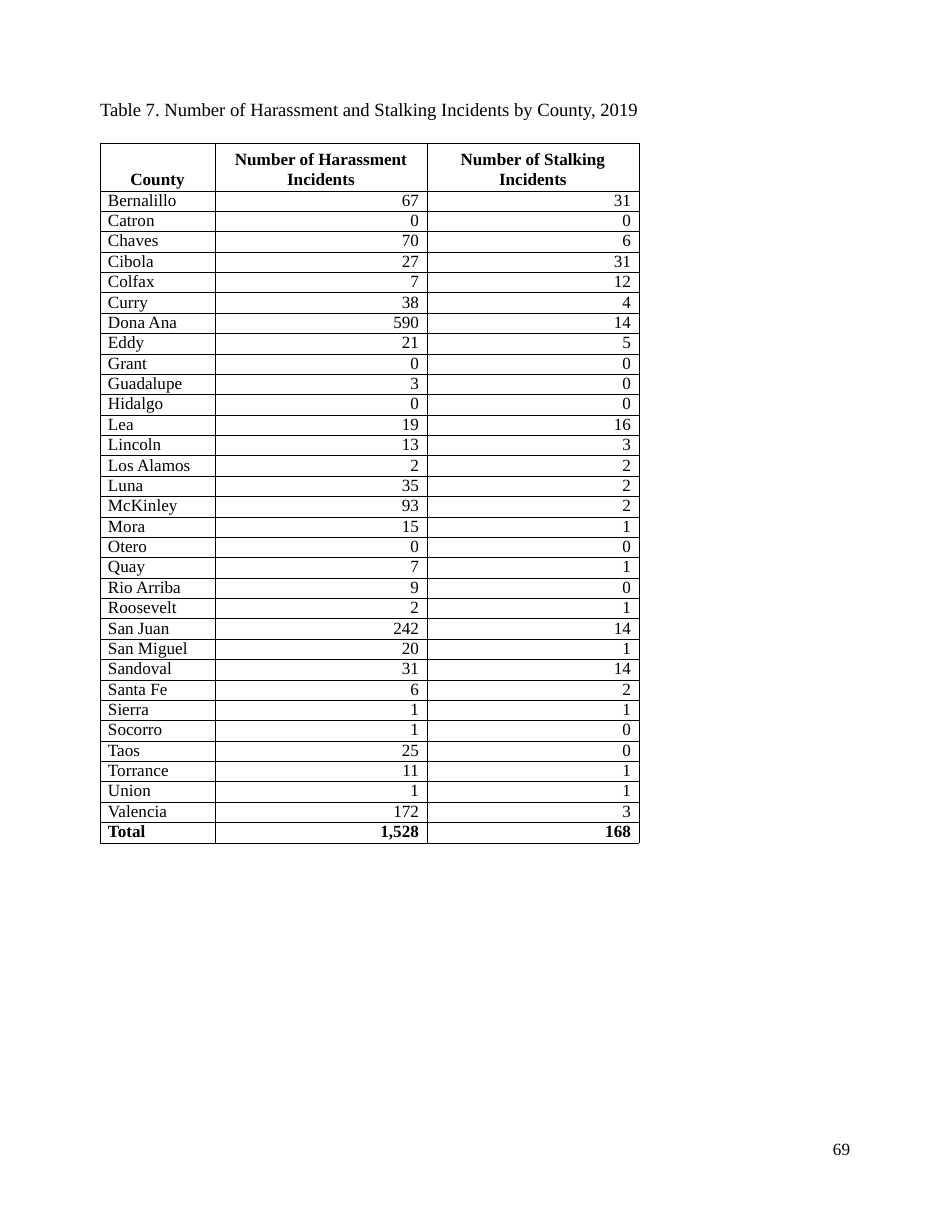
import pptx
import pptx.util
import pptx.oxml
import pptx.oxml.ns
import pptx.dml.color
import pptx.enum.text

ALIGN = pptx.enum.text.PP_ALIGN
ANCHOR = pptx.enum.text.MSO_ANCHOR
COLORS = {"ink": "000000"}
FONT = "Times New Roman"
SCALE = 914400 // 112

HEADS = ["County", "Number of Harassment Incidents", "Number of Stalking Incidents"]
COUNTS = [
    ("Bernalillo", 67, 31), ("Catron", 0, 0), ("Chaves", 70, 6),
    ("Cibola", 27, 31), ("Colfax", 7, 12), ("Curry", 38, 4),
    ("Dona Ana", 590, 14), ("Eddy", 21, 5), ("Grant", 0, 0),
    ("Guadalupe", 3, 0), ("Hidalgo", 0, 0), ("Lea", 19, 16),
    ("Lincoln", 13, 3), ("Los Alamos", 2, 2), ("Luna", 35, 2),
    ("McKinley", 93, 2), ("Mora", 15, 1), ("Otero", 0, 0),
    ("Quay", 7, 1), ("Rio Arriba", 9, 0), ("Roosevelt", 2, 1),
    ("San Juan", 242, 14), ("San Miguel", 20, 1), ("Sandoval", 31, 14),
    ("Santa Fe", 6, 2), ("Sierra", 1, 1), ("Socorro", 1, 0),
    ("Taos", 25, 0), ("Torrance", 11, 1), ("Union", 1, 1),
    ("Valencia", 172, 3), ("Total", 1528, 168),
]


def px(count):
    return pptx.util.Emu(count * SCALE)


def assign(item, values):
    for name, value in values.items():
        setattr(item, name, value)


def write(frame, text, size, para, bold=False):
    """Fill a text frame with one styled paragraph."""
    line = frame.paragraphs[0]
    assign(line, para)
    run = line.add_run()
    run.text = text
    assign(run.font, {"name": FONT, "size": pptx.util.Pt(size), "bold": bold})
    run.font.color.rgb = pptx.dml.color.RGBColor.from_string(COLORS["ink"])


def set_text(shape, box, text, size):
    """Place a shape and set its text, flush with its left edge."""
    assign(shape, dict(zip(("left", "top", "width", "height"), map(px, box))))
    assign(shape.text_frame, {
        "margin_left": 0, "margin_right": 0, "margin_top": px(1),
        "margin_bottom": 0, "word_wrap": True, "vertical_anchor": ANCHOR.TOP,
        "auto_size": pptx.enum.text.MSO_AUTO_SIZE.NONE})
    para = {"alignment": ALIGN.LEFT, "space_before": pptx.util.Pt(1), "line_spacing": 1.0}
    write(shape.text_frame, text, size, para)


def add_rules(cell):
    """Draw a thin line on all four sides of a cell."""
    props = cell._tc.get_or_add_tcPr()
    for spot, side in enumerate("LRTB"):
        props.insert(spot, pptx.oxml.parse_xml(
            f'<a:ln{side} {pptx.oxml.ns.nsdecls("a")} w="6350"><a:solidFill>'
            f'<a:srgbClr val="{COLORS["ink"]}"/></a:solidFill></a:ln{side}>'))


def fill_cell(cell, text, align, bold, head):
    cell.fill.background()
    assign(cell, {
        "margin_left": px(8), "margin_right": px(8), "margin_top": 0,
        "margin_bottom": px(2 if head else 0),
        "vertical_anchor": ANCHOR.BOTTOM if head else ANCHOR.TOP})
    space = pptx.util.Pt(12.7 if head else 12.2)
    write(cell.text_frame, text, 11, {"alignment": align, "line_spacing": space}, bold)
    add_rules(cell)


def add_counts(slide):
    rows = [HEADS] + [(name, f"{first:,}", f"{last:,}") for name, first, last in COUNTS]
    frame = slide.shapes.add_table(len(rows), 3, px(100), px(143), px(539), px(701))
    table = frame.table
    assign(table, {"first_row": False, "horz_banding": False})
    for col, width in zip(table.columns, (115, 212, 212)):
        col.width = px(width)
    for index, texts in enumerate(rows):
        head = index == 0
        table.rows[index].height = px(48) if head else px(653) // len(COUNTS)
        bold = head or texts[0] == "Total"
        for spot, text in enumerate(texts):
            align = ALIGN.CENTER if head else ALIGN.RIGHT if spot else ALIGN.LEFT
            fill_cell(table.cell(index, spot), text, align, bold, head)


def main():
    deck = pptx.Presentation()
    assign(deck, {"slide_width": px(952), "slide_height": px(1232)})
    slide = deck.slides.add_slide(deck.slide_layouts[5])
    set_text(slide.shapes.title, (100, 97, 544, 26),
             "Table 7. Number of Harassment and Stalking Incidents by County, 2019", 12)
    add_counts(slide)
    page = slide.shapes.add_textbox(0, 0, 0, 0)
    set_text(page, (833, 1137, 20, 24), "69", 11)
    deck.save("out.pptx")


if __name__ == "__main__":
    main()
